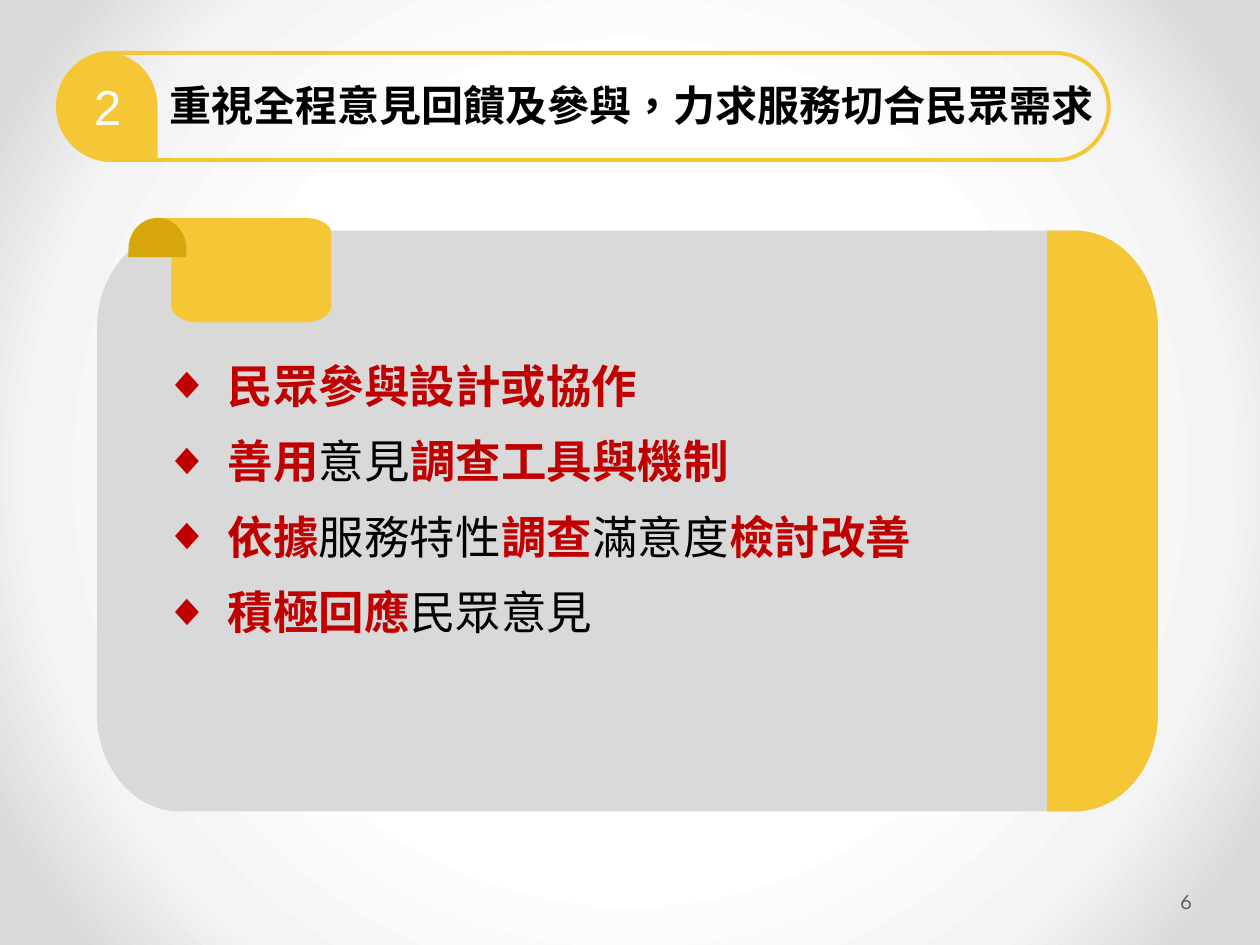
import pptx
import pptx.dml.color
import pptx.enum.shapes
import pptx.enum.text
import pptx.oxml
import pptx.oxml.ns
import pptx.util

Inches = pptx.util.Inches
Pt = pptx.util.Pt
color = pptx.dml.color.RGBColor.from_string
namespace = pptx.oxml.ns.nsdecls("a")

theme = {
    "gold": "F5C636", "dark_gold": "D7A60B", "panel": "D9D9D9",
    "accent": "C00000", "text": "000000", "white": "FFFFFF", "muted": "595959",
    "background": [(50, "FFFFFF"), (76, "F4F4F4"), (92, "DADADA")],
    "font": "Arial", "number_font": "League Spartan",
    "badge_size": 28, "body_size": 26, "title_size": 24, "number_size": 12,
}


def add_text(slide, box, paragraphs, size, font="font"):
    text_box = slide.shapes.add_textbox(*map(Inches, box))
    text_frame = text_box.text_frame
    text_frame.word_wrap = True
    for index, runs in enumerate(paragraphs):
        paragraph = text_frame.add_paragraph() if index else text_frame.paragraphs[0]
        for text, tone, bold in runs:
            run = paragraph.add_run()
            run.text = text
            run.font.name = theme[font]
            run.font.size = Pt(theme[size])
            run.font.bold = bold
            run.font.color.rgb = color(theme[tone])
            run._r.get_or_add_rPr().set("lang", "zh-TW")
    return text_frame


def add_outline(slide, start, segments, tone):
    points = [(Inches(x), Inches(y)) for segment in segments for x, y in segment]
    builder = slide.shapes.build_freeform(Inches(start[0]), Inches(start[1]))
    builder.add_line_segments(points, close=True)
    shape = builder.convert_to_shape()
    shape.shadow.inherit = False
    shape.fill.solid()
    shape.fill.fore_color.rgb = color(theme[tone])
    shape.line.fill.background()
    lines = iter(shape._element.findall(".//" + pptx.oxml.ns.qn("a:lnTo")))
    for segment in segments:
        parts = [next(lines) for _ in segment]
        if len(parts) == 3:
            curve = pptx.oxml.parse_xml(f"<a:cubicBezTo {namespace}/>")
            parts[0].addprevious(curve)
            for part in parts:
                curve.append(part[0])
                part.getparent().remove(part)


presentation = pptx.Presentation()
presentation.slide_width = Inches(10)
presentation.slide_height = Inches(7.5)
slide = presentation.slides.add_slide(presentation.slide_layouts[6])

stops = "".join(f'<a:gs pos="{position * 1000}"><a:srgbClr val="{tone}"/></a:gs>'
                for position, tone in theme["background"])
background = pptx.oxml.parse_xml(
    f'<p:bg {pptx.oxml.ns.nsdecls("p", "a")}><p:bgPr><a:gradFill rotWithShape="1">'
    f'<a:gsLst>{stops}</a:gsLst><a:path path="circle">'
    '<a:fillToRect l="50000" t="50000" r="50000" b="50000"/></a:path>'
    '</a:gradFill><a:effectLst/></p:bgPr></p:bg>')
slide.element.cSld.insert(0, background)

number_frame = add_text(slide, (9.34, 6.95, 0.61, 0.4), [[("6", "muted", False)]],
                        "number_size", "number_font")
number_frame.margin_left = Inches(0.03)
number_frame.margin_right = Inches(0.05)
number_frame.vertical_anchor = pptx.enum.text.MSO_ANCHOR.MIDDLE

panel = [[(8.56, 1.83)], [(8.56, 6.44)], [(1.43, 6.44)],
         [(1.07, 6.44), (0.77, 6.1), (0.77, 5.67)], [(0.77, 2.6)],
         [(0.77, 2.17), (1.07, 1.83), (1.43, 1.83)]]
side_band = [[(8.53, 1.83)], [(8.89, 1.83), (9.19, 2.17), (9.19, 2.6)], [(9.19, 5.67)],
             [(9.19, 6.1), (8.89, 6.44), (8.53, 6.44)], [(8.31, 6.44)]]
ribbon = [[(2.42, 1.73)], [(2.53, 1.73), (2.63, 1.78), (2.63, 1.85)], [(2.63, 2.43)],
          [(2.63, 2.5), (2.53, 2.56), (2.42, 2.56)], [(1.57, 2.56)],
          [(1.46, 2.56), (1.36, 2.5), (1.36, 2.43)], [(1.36, 1.81)],
          [(1.36, 1.76), (1.3, 1.73), (1.23, 1.73)]]
ribbon_curl = [[(1.38, 1.73), (1.48, 1.84), (1.48, 1.98)], [(1.48, 2.04)], [(1.02, 2.04)],
               [(1.02, 1.98)], [(1.02, 1.84), (1.12, 1.73), (1.25, 1.73)]]

for start, segments, tone in [((1.43, 1.83), panel, "panel"), ((8.31, 1.83), side_band, "gold"),
                              ((1.23, 1.73), ribbon, "gold"),
                              ((1.25, 1.73), ribbon_curl, "dark_gold")]:
    add_outline(slide, start, segments, tone)

service_points = [
    [("民眾參與設計或協作", "accent", True)],
    [("善用", "accent", True), ("意見", "text", False), ("調查工具與機制", "accent", True)],
    [("依據", "accent", True), ("服務特性", "text", False), ("調查", "accent", True),
     ("滿意度", "text", False), ("檢討改善", "accent", True)],
    [("積極回應", "accent", True), ("民眾意見", "text", False)],
]
body_frame = add_text(slide, (1.21, 2.79, 7, 2.36), service_points, "body_size")
for paragraph in body_frame.paragraphs:
    paragraph.space_before = Pt(12)
    properties = paragraph._p.get_or_add_pPr()
    properties.set("marL", str(Inches(0.5)))
    properties.set("indent", str(-Inches(0.5)))
    properties.append(pptx.oxml.parse_xml(f'<a:buFont {namespace} typeface="{theme["font"]}"/>'))
    properties.append(pptx.oxml.parse_xml(f'<a:buChar {namespace} char="◆"/>'))

shape_types = pptx.enum.shapes.MSO_SHAPE
title_outline = slide.shapes.add_shape(
    shape_types.ROUNDED_RECTANGLE, Inches(0.46), Inches(0.42), Inches(8.34), Inches(0.85))
title_outline.adjustments[0] = 0.5
title_outline.shadow.inherit = False
title_outline.fill.background()
title_outline.line.color.rgb = color(theme["gold"])
title_outline.line.width = Pt(2.25)

badge = slide.shapes.add_shape(
    shape_types.TEAR, Inches(0.46), Inches(0.42), Inches(0.79), Inches(0.85))
badge._element.spPr.xfrm.set("flipV", "1")
badge.shadow.inherit = False
badge.fill.solid()
badge.fill.fore_color.rgb = color(theme["gold"])
badge.line.fill.background()

title_frame = add_text(slide, (0.86, 0.65, 8.2, 0.44),
                       [[("重視全程意見回饋及參與，力求服務切合民眾需求", "text", True)]], "title_size")
title_frame.paragraphs[0].line_spacing = Pt(24)
title_frame.paragraphs[0]._p.get_or_add_pPr().set("marL", str(Inches(0.39)))

badge_frame = add_text(slide, (0.5, 0.56, 0.71, 0.57), [[("2", "white", False)]], "badge_size")
badge_frame.paragraphs[0].alignment = pptx.enum.text.PP_ALIGN.CENTER

presentation.save("out.pptx")
